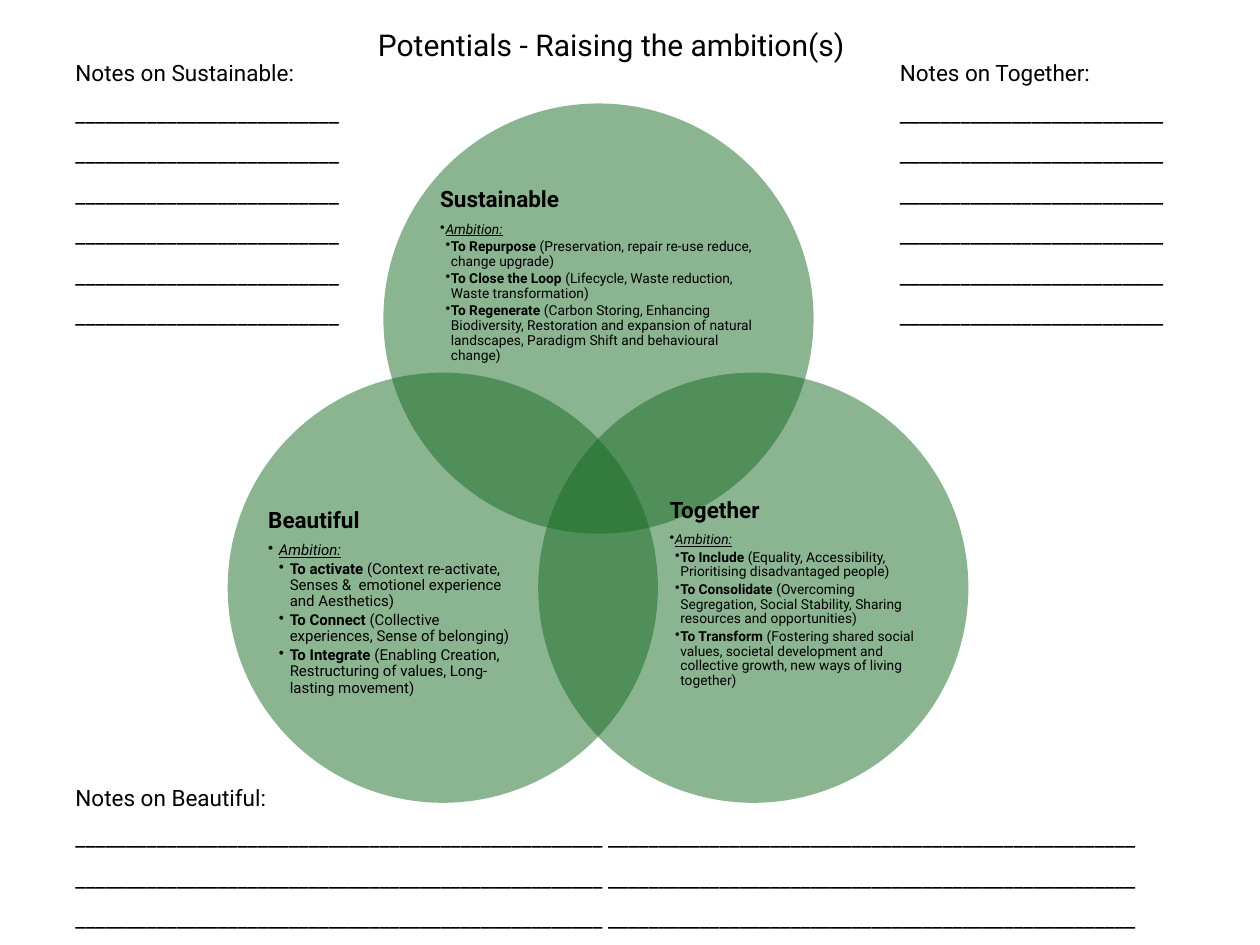
"""Build the Potentials slide: a three-circle Venn diagram with ruled note areas."""
from dataclasses import dataclass

import pptx
import pptx.dml.color
import pptx.enum.shapes
import pptx.enum.text
import pptx.oxml.ns
import pptx.util
from lxml import etree

Inches = pptx.util.Inches
Pt = pptx.util.Pt
FONT = "Roboto"
BLACK = "000000"
GREEN = "196B24"
DIAMETER = 4.78


@dataclass
class Box:
    left: float
    top: float
    width: float
    height: float


@dataclass
class Circle:
    left: float
    top: float
    box: Box
    title: str
    size: int
    indent: float
    ambitions: list[tuple[str, str]]


@dataclass
class Notes:
    box: Box
    title: str
    rule: str
    count: int


CIRCLES = [
    Circle(4.26, 1.15, Box(4.89, 1.99, 3.51, 2.15), "Sustainable", 11, 0.06, [
        ("To Repurpose ", "(Preservation, repair re-use reduce, change upgrade)"),
        ("To Close the Loop ", "(Lifecycle, Waste reduction, Waste transformation)"),
        ("To Regenerate ", "(Carbon Storing, Enhancing Biodiversity, Restoration and expansion "
         "of natural landscapes, Paradigm Shift and behavioural change)"),
    ]),
    Circle(5.98, 4.14, Box(7.44, 5.38, 2.87, 2.44), "Together", 11, 0.06, [
        ("To Include ", "(Equality, Accessibility, Prioritising disadvantaged people)"),
        ("To Consolidate ", "(Overcoming Segregation, Social Stability, Sharing resources "
         "and opportunities)"),
        ("To Transform ", "(Fostering shared social values, societal development and "
         "collective growth, new ways of living together)"),
    ]),
    Circle(2.53, 4.14, Box(2.98, 5.38, 2.87, 2.63), "Beautiful", 12, 0.12, [
        ("To activate ", "(Context re-activate, Senses &  emotionel experience and Aesthetics)"),
        ("To Connect", " (Collective experiences, Sense of belonging)"),
        ("To Integrate", " (Enabling Creation, Restructuring of values, Long-lasting movement)"),
    ]),
]

SHORT_RULE = "_" * 26
LONG_RULE = " ".join(["_" * 52] * 2)
NOTES = [
    Notes(Box(0.74, 0.46, 3.36, 3.24), "Notes on Sustainable:", SHORT_RULE, 6),
    Notes(Box(9.9, 0.46, 3.36, 3.24), "Notes on Together:", SHORT_RULE, 6),
    Notes(Box(0.74, 8.51, 12.24, 1.87), "Notes on Beautiful:", LONG_RULE, 3),
]


def rgb(color: str) -> pptx.dml.color.RGBColor:
    return pptx.dml.color.RGBColor.from_string(color)


def add_box(s, box: Box):
    sp = s.shapes.add_textbox(Inches(box.left), Inches(box.top),
                              Inches(box.width), Inches(box.height))
    tf = sp.text_frame
    tf.word_wrap = True
    return tf


def add_run(p, text: str, *, size: float, bold=False, italic=False, underline=False):
    r = p.add_run()
    r.text = text
    font = r.font
    font.name, font.size = FONT, Pt(size)
    font.bold, font.italic, font.underline = bold, italic, underline
    font.color.rgb = rgb(BLACK)


def next_paragraph(tf):
    first = tf.paragraphs[0]
    return first if not first.runs else tf.add_paragraph()


def add_bullet(tf, level: int, c: Circle):
    p = tf.add_paragraph()
    p.level = level
    pPr = p._p.get_or_add_pPr()
    pPr.set("marL", str(Inches(c.indent * level)))
    pPr.set("indent", str(-Inches(c.indent)))
    etree.SubElement(pPr, pptx.oxml.ns.qn("a:buChar")).set("char", "•")
    p.line_spacing = 0.9
    p.space_after = Pt(c.size * 0.18)
    return p


def draw_circle(s, c: Circle):
    sp = s.shapes.add_shape(pptx.enum.shapes.MSO_SHAPE.OVAL, Inches(c.left), Inches(c.top),
                            Inches(DIAMETER), Inches(DIAMETER))
    sp.shadow.inherit = False
    sp.line.fill.background()
    sp.fill.solid()
    sp.fill.fore_color.rgb = rgb(GREEN)
    color = sp._element.spPr.find(".//" + pptx.oxml.ns.qn("a:srgbClr"))
    etree.SubElement(color, pptx.oxml.ns.qn("a:alpha")).set("val", "50000")

    tf = add_box(s, c.box)
    tf.margin_left = tf.margin_top = tf.margin_right = tf.margin_bottom = 0
    tf.vertical_anchor = pptx.enum.text.MSO_ANCHOR.MIDDLE
    p = next_paragraph(tf)
    p.line_spacing, p.space_after = 0.9, Pt(7.5)
    add_run(p, c.title, size=18, bold=True)
    add_run(add_bullet(tf, 1, c), "Ambition:", size=c.size, italic=True, underline=True)
    for name, detail in c.ambitions:
        p = add_bullet(tf, 2, c)
        add_run(p, name, size=c.size, bold=True)
        add_run(p, detail, size=c.size)


def draw_notes(s, n: Notes):
    tf = add_box(s, n.box)
    for text in [n.title] + [n.rule] * n.count:
        p = next_paragraph(tf)
        p.line_spacing = 1.5
        add_run(p, text, size=18)


def main():
    prs = pptx.Presentation()
    prs.slide_width, prs.slide_height = Inches(14), Inches(10.5)
    s = prs.slides.add_slide(prs.slide_layouts[6])
    for c in CIRCLES:
        draw_circle(s, c)
    for n in NOTES:
        draw_notes(s, n)
    tf = add_box(s, Box(4.1, 0.25, 5.42, 0.5))
    add_run(next_paragraph(tf), "Potentials - Raising the ambition(s)", size=24)
    prs.save("out.pptx")


if __name__ == "__main__":
    main()
